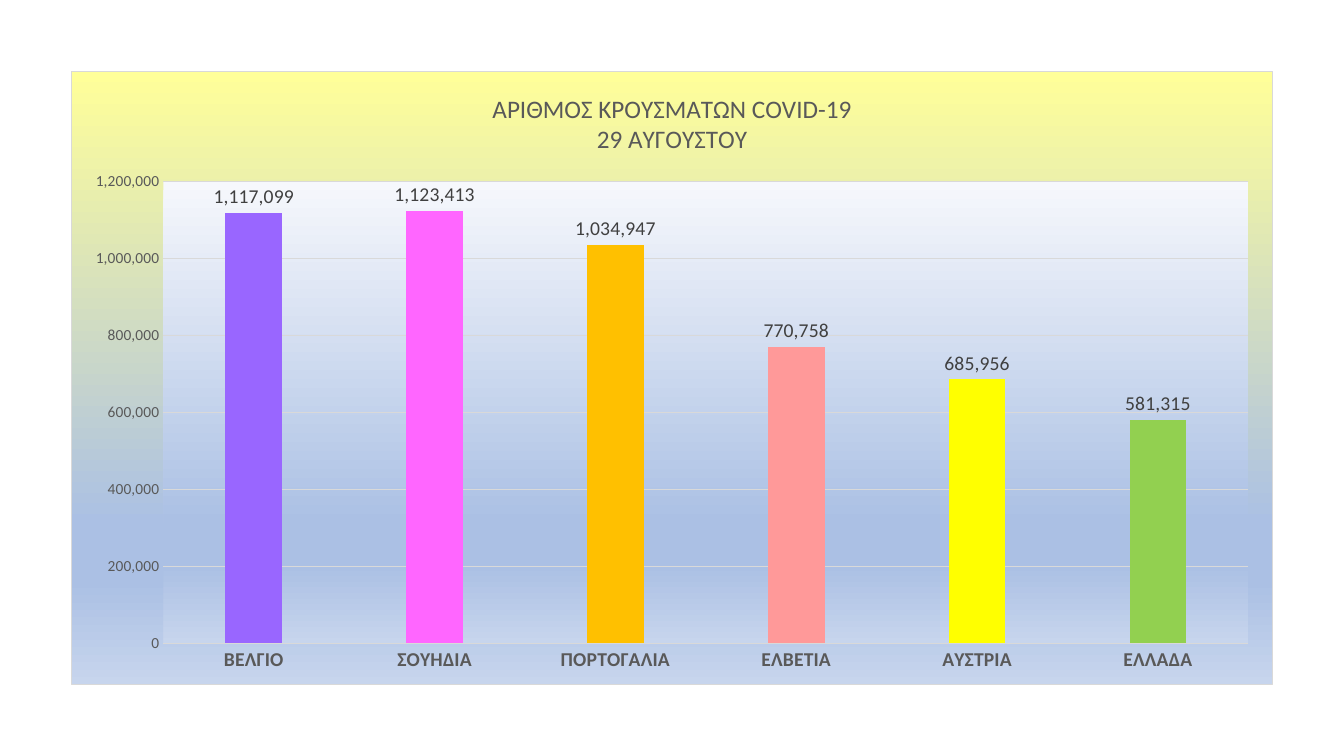
"""Builds a slide with a column chart of COVID-19 cases in six countries."""
from lxml.etree import SubElement
from pptx import Presentation
from pptx.chart.data import CategoryChartData
from pptx.dml.color import RGBColor
from pptx.enum.chart import XL_CHART_TYPE, XL_LABEL_POSITION, XL_TICK_MARK
from pptx.oxml import parse_xml
from pptx.oxml.ns import nsdecls, qn
from pptx.util import Pt

SCALE = 12192000 / 1344
GREY, RULE = "595959", "D9D9D9"
CASES = [
    ("ΒΕΛΓΙΟ", 1117099, "9966FF"),
    ("ΣΟΥΗΔΙΑ", 1123413, "FF66FF"),
    ("ΠΟΡΤΟΓΑΛΙΑ", 1034947, "FFC000"),
    ("ΕΛΒΕΤΙΑ", 770758, "FF9999"),
    ("ΑΥΣΤΡΙΑ", 685956, "FFFF00"),
    ("ΕΛΛΑΔΑ", 581315, "92D050"),
]


def color(value):
    return RGBColor.from_string(value)


def gradient(top, outline):
    stops = [(0, top), (74, "ABC0E4"), (83, "ABC0E4"), (100, "C7D5ED")]
    stop_xml = "".join(
        f'<a:gs pos="{pos * 1000}"><a:srgbClr val="{shade}"/></a:gs>' for pos, shade in stops)
    return parse_xml(
        f'<c:spPr {nsdecls("c", "a")}><a:gradFill><a:gsLst>{stop_xml}</a:gsLst>'
        f'<a:lin ang="5400000" scaled="0"/></a:gradFill>{outline}</c:spPr>')


presentation = Presentation()
presentation.slide_width = round(1344 * SCALE)
presentation.slide_height = round(756 * SCALE)
slide = presentation.slides.add_slide(presentation.slide_layouts[6])

case_data = CategoryChartData(number_format="#,##0")
case_data.categories = [country for country, _, _ in CASES]
case_data.add_series("Series 1", [count for _, count, _ in CASES])
frame = [round(pixels * SCALE) for pixels in (71, 71, 1202, 614)]
chart = slide.shapes.add_chart(XL_CHART_TYPE.COLUMN_CLUSTERED, *frame, case_data).chart
chart.has_legend = False

title = chart.chart_title
title.include_in_layout = False
heading = title.text_frame
heading.text = "ΑΡΙΘΜΟΣ ΚΡΟΥΣΜΑΤΩΝ COVID-19\n29 ΑΥΓΟΥΣΤΟΥ"

columns = chart.plots[0]
columns.gap_width = 219
columns.overlap = -27
columns.vary_by_categories = False
columns.has_data_labels = True
counts = columns.data_labels
counts.show_value = True
counts.number_format = "#,##0"
counts.number_format_is_linked = False
counts.position = XL_LABEL_POSITION.OUTSIDE_END

cases = columns.series[0]
cases.format.fill.solid()
cases.format.fill.fore_color.rgb = color("4472C4")
for index, (_, _, shade) in enumerate(CASES):
    fill = cases.points[index].format.fill
    fill.solid()
    fill.fore_color.rgb = color(shade)

countries, scale_axis = chart.category_axis, chart.value_axis
for axis in (countries, scale_axis):
    axis.major_tick_mark = axis.minor_tick_mark = XL_TICK_MARK.NONE
scale_axis.minimum_scale = 0
scale_axis.maximum_scale = 1200000
scale_axis.major_unit = 200000
scale_axis.tick_labels.number_format = "#,##0"
scale_axis.tick_labels.number_format_is_linked = False
scale_axis.format.line.fill.background()
for line in (countries.format.line, scale_axis.major_gridlines.format.line):
    line.color.rgb = color(RULE)
    line.width = Pt(0.75)

fonts = [
    (chart.font, 10, "000000", False),
    (countries.tick_labels.font, 14, GREY, True),
    (scale_axis.tick_labels.font, 11, GREY, False),
    (counts.font, 14, "404040", False),
] + [(paragraph.runs[0].font, 18, GREY, False) for paragraph in heading.paragraphs]
for font, size, shade, bold in fonts:
    for name, value in {"name": "Calibri", "size": Pt(size), "bold": bold}.items():
        setattr(font, name, value)
    font.color.rgb = color(shade)

chart_space = chart.element
border = f'<a:ln w="9525"><a:solidFill><a:srgbClr val="{RULE}"/></a:solidFill></a:ln>'
chart_space.find(qn("c:chart")).addnext(gradient("FFFF99", border))
plot_area = chart_space.find(".//" + qn("c:plotArea"))
plot_area.append(gradient("F6F8FC", "<a:ln><a:noFill/></a:ln>"))

for automatic in plot_area.findall(qn("c:layout")):
    plot_area.remove(automatic)
layout = parse_xml(f'<c:layout {nsdecls("c")}><c:manualLayout/></c:layout>')
plot_area.insert(0, layout)
placement = {
    "layoutTarget": "inner", "xMode": "edge", "yMode": "edge",
    "x": 92 / 1202, "y": 110 / 614, "w": 1086 / 1202, "h": 463 / 614,
}
for tag, value in placement.items():
    SubElement(layout[0], qn(f"c:{tag}")).set("val", str(value))

presentation.save("out.pptx")
